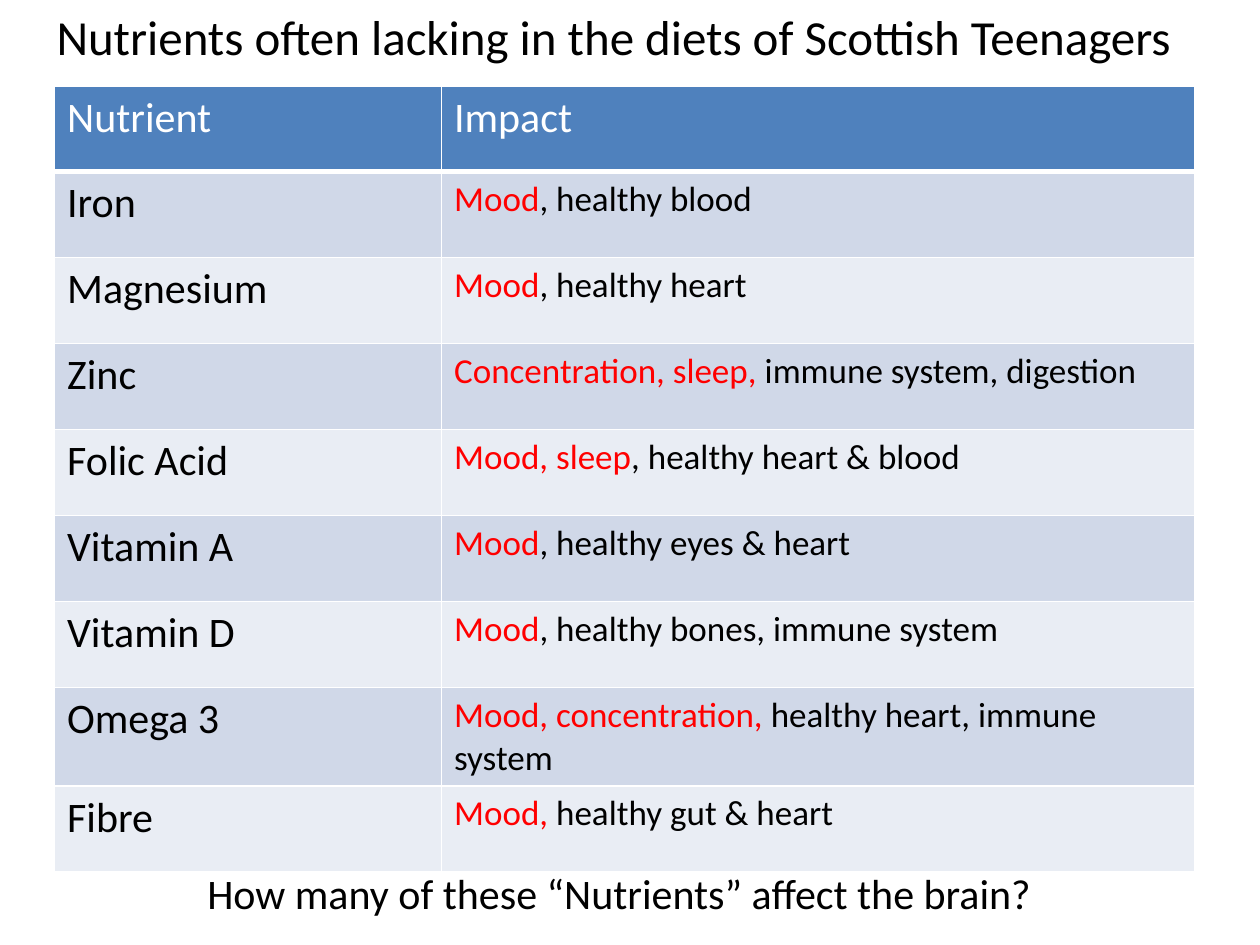
from lxml.etree import SubElement
from pptx import Presentation
from pptx.dml.color import RGBColor
from pptx.enum.text import MSO_AUTO_SIZE, PP_ALIGN
from pptx.oxml.ns import qn
from pptx.util import Cm, Pt

FONT = "Calibri"
BLACK = RGBColor(0x00, 0x00, 0x00)
WHITE = RGBColor(0xFF, 0xFF, 0xFF)
RED = RGBColor(0xFF, 0x00, 0x00)
HEADER_BLUE = RGBColor(0x4F, 0x81, 0xBD)
BANDS = (RGBColor(0xD0, 0xD8, 0xE8), RGBColor(0xE9, 0xED, 0xF4))

# Nutrient, effect on the brain, other effects
NUTRIENTS = [
    ("Iron", "Mood", ", healthy blood"),
    ("Magnesium", "Mood", ", healthy heart"),
    ("Zinc", "Concentration, sleep, ", "immune system, digestion"),
    ("Folic Acid", "Mood, sleep", ", healthy heart & blood"),
    ("Vitamin A", "Mood", ", healthy eyes & heart"),
    ("Vitamin D", "Mood", ", healthy bones, immune system"),
    ("Omega 3", "Mood, concentration,", " healthy heart, immune system"),
    ("Fibre", "Mood,", " healthy gut & heart"),
]


def add_text(p, text, size=24, color=BLACK):
    r = p.add_run()
    r.text = text
    r.font.name = FONT
    r.font.size = Pt(size)
    r.font.bold = False
    r.font.color.rgb = color


def add_line(slide, box, text, size, align=PP_ALIGN.LEFT):
    tf = slide.shapes.add_textbox(*box).text_frame
    tf.word_wrap = True
    tf.auto_size = MSO_AUTO_SIZE.SHAPE_TO_FIT_TEXT
    p = tf.paragraphs[0]
    p.alignment = align
    add_text(p, text, size=size)


def style_cell(cell, fill, bottom=1):
    """White borders first, then the fill, as the schema orders them."""
    tc_pr = cell._tc.get_or_add_tcPr()
    for side, width in (("L", 1), ("R", 1), ("T", 1), ("B", bottom)):
        ln = SubElement(tc_pr, qn(f"a:ln{side}"), w=str(Pt(width)))
        SubElement(SubElement(ln, qn("a:solidFill")), qn("a:srgbClr"), val=str(WHITE))
    cell.fill.solid()
    cell.fill.fore_color.rgb = fill


def add_nutrient_table(slide, box, first_width):
    left, top, width, height = box
    table = slide.shapes.add_table(len(NUTRIENTS) + 1, 2, *box).table
    table.columns[0].width = first_width
    table.columns[1].width = width - first_width

    # Header
    for cell, text in zip(table.rows[0].cells, ("Nutrient", "Impact")):
        style_cell(cell, HEADER_BLUE, bottom=3)
        add_text(cell.text_frame.paragraphs[0], text, color=WHITE)

    # Banded body
    for i, (nutrient, brain, other) in enumerate(NUTRIENTS):
        name, impact = table.rows[i + 1].cells
        for cell in (name, impact):
            style_cell(cell, BANDS[i % 2])
        add_text(name.text_frame.paragraphs[0], nutrient)
        p = impact.text_frame.paragraphs[0]
        add_text(p, brain, size=20, color=RED)
        add_text(p, other, size=20)


def main():
    prs = Presentation()
    prs.slide_width, prs.slide_height = Cm(25.4), Cm(19.05)
    slide = prs.slides.add_slide(prs.slide_layouts[6])

    left, width = Cm(0.89), Cm(23.19)
    add_nutrient_table(slide, (Cm(1.1), Cm(1.73), Cm(22.99), Cm(15.6)), Cm(7.8))
    add_line(slide, (left, Cm(17.37), width, Cm(1.28)),
             "How many of these “Nutrients” affect the brain?", 24, PP_ALIGN.CENTER)
    add_line(slide, (left, 0, width, Cm(1.45)),
             "Nutrients often lacking in the diets of Scottish Teenagers", 28)

    prs.save("out.pptx")


if __name__ == "__main__":
    main()
